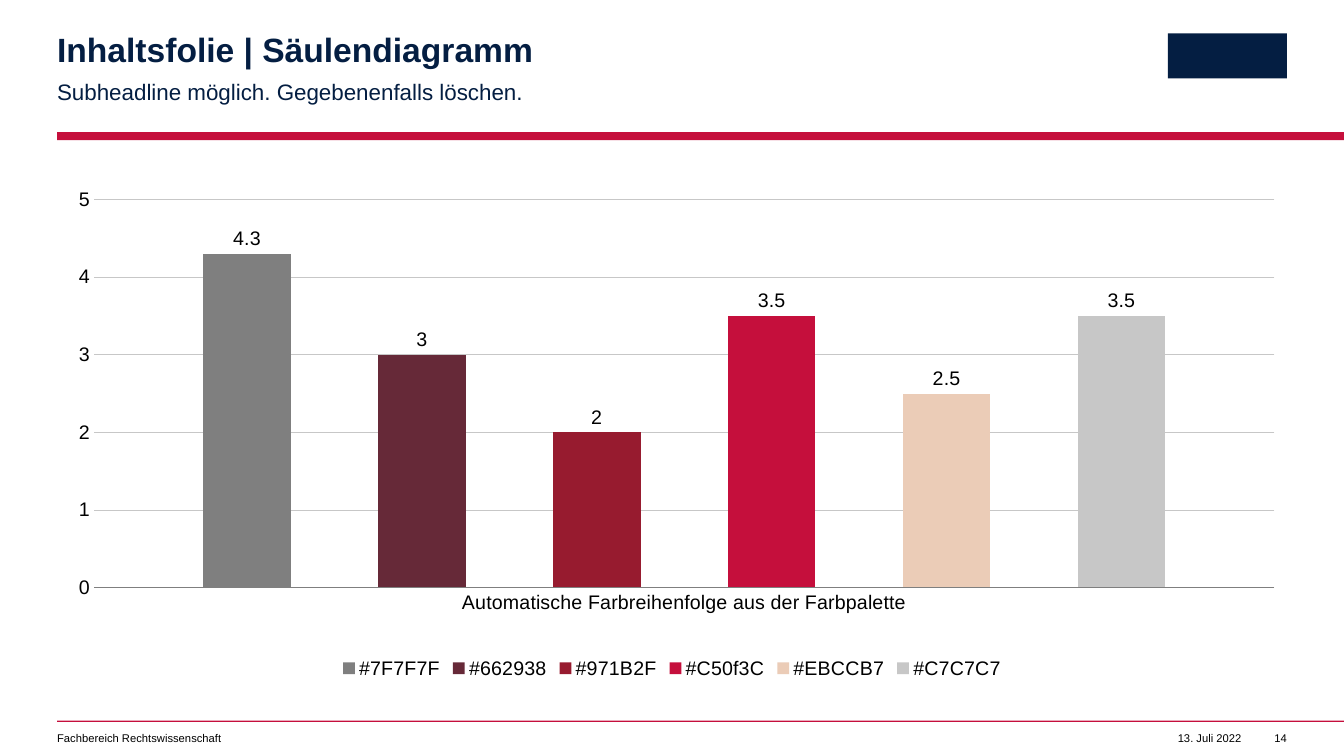
from dataclasses import dataclass

from lxml.etree import SubElement
from pptx import Presentation
from pptx.chart.data import CategoryChartData
from pptx.dml.color import RGBColor
from pptx.enum.chart import XL_CHART_TYPE, XL_LABEL_POSITION, XL_LEGEND_POSITION, XL_TICK_MARK
from pptx.enum.shapes import MSO_SHAPE
from pptx.enum.text import MSO_ANCHOR, MSO_AUTO_SIZE, PP_ALIGN
from pptx.oxml import parse_xml
from pptx.oxml.ns import nsdecls, qn
from pptx.slide import Slide
from pptx.text.text import Font, TextFrame
from pptx.util import Cm, Pt

NAVY = RGBColor(0x04, 0x1E, 0x42)
CRIMSON = RGBColor(0xC5, 0x0F, 0x3C)
BLACK = RGBColor(0x00, 0x00, 0x00)
GREY = RGBColor(0x7F, 0x7F, 0x7F)
WINE = RGBColor(0x66, 0x29, 0x38)
RUBY = RGBColor(0x97, 0x1B, 0x2F)
SAND = RGBColor(0xEB, 0xCC, 0xB7)
SILVER = RGBColor(0xC7, 0xC7, 0xC7)

FONT_NAME = "Arial"
PAGE_WIDTH = 33.87
PAGE_HEIGHT = 19.05
MARGIN = 1.44
CONTENT_WIDTH = PAGE_WIDTH - 2 * MARGIN


@dataclass(frozen=True)
class Block:
    left: float
    top: float
    width: float
    height: float
    color: RGBColor


@dataclass(frozen=True)
class Label:
    text: str
    left: float
    top: float
    width: float
    height: float
    size: float = 8
    color: RGBColor = BLACK
    bold: bool = False
    align: PP_ALIGN = PP_ALIGN.LEFT
    line_spacing: float = 1.0


@dataclass(frozen=True)
class Column:
    name: str
    value: float
    color: RGBColor


BLOCKS = [
    Block(MARGIN, 3.33, PAGE_WIDTH - MARGIN, 0.2, CRIMSON),
    Block(MARGIN, 18.16, PAGE_WIDTH - MARGIN, 0.03, CRIMSON),
    Block(29.43, 0.84, 3, 1.14, NAVY),
]
TITLE = Label("Inhaltsfolie | Säulendiagramm", MARGIN, 0.84, 19.02, 0.91,
              24, NAVY, True, line_spacing=0.9)
LABELS = [
    Label("Subheadline möglich. Gegebenenfalls löschen.", MARGIN, 1.91, 19.02, 0.69,
          16, NAVY, line_spacing=1.1),
    Label("Fachbereich Rechtswissenschaft", MARGIN, 18.44, 15.2, 0.33),
    Label("13. Juli 2022", 28.93, 18.44, 2.36, 0.33, align=PP_ALIGN.RIGHT),
    Label("14", 31.9, 18.44, 0.53, 0.33, align=PP_ALIGN.RIGHT),
]
CATEGORY = "Automatische Farbreihenfolge aus der Farbpalette"
COLUMNS = [
    Column("#7F7F7F", 4.3, GREY),
    Column("#662938", 3, WINE),
    Column("#971B2F", 2, RUBY),
    Column("#C50f3C", 3.5, CRIMSON),
    Column("#EBCCB7", 2.5, SAND),
    Column("#C7C7C7", 3.5, SILVER),
]
PLOT_AREA = {"x": 0.03, "y": 0.04, "w": 0.96, "h": 0.77}


def style_font(font: Font, size: float, color: RGBColor, bold: bool = False) -> None:
    font.name = FONT_NAME
    font.size = Pt(size)
    font.bold = bold
    font.color.rgb = color


def fill_frame(frame: TextFrame, label: Label) -> None:
    frame.text = label.text
    frame.word_wrap = True
    frame.auto_size = MSO_AUTO_SIZE.NONE
    frame.vertical_anchor = MSO_ANCHOR.TOP
    frame.margin_left = frame.margin_right = frame.margin_top = frame.margin_bottom = 0
    para = frame.paragraphs[0]
    para.alignment = label.align
    para.line_spacing = label.line_spacing
    style_font(para.runs[0].font, label.size, label.color, label.bold)


def draw_block(page: Slide, block: Block) -> None:
    box = page.shapes.add_shape(MSO_SHAPE.RECTANGLE, Cm(block.left), Cm(block.top),
                                Cm(block.width), Cm(block.height))
    box.shadow.inherit = False
    box.fill.solid()
    box.fill.fore_color.rgb = block.color
    box.line.fill.background()


def draw_title(page: Slide, label: Label) -> None:
    title = page.shapes.title
    title.left, title.top = Cm(label.left), Cm(label.top)
    title.width, title.height = Cm(label.width), Cm(label.height)
    fill_frame(title.text_frame, label)


def draw_label(page: Slide, label: Label) -> None:
    box = page.shapes.add_textbox(Cm(label.left), Cm(label.top),
                                  Cm(label.width), Cm(label.height))
    fill_frame(box.text_frame, label)


def draw_chart(page: Slide, columns: list[Column]) -> None:
    chart_data = CategoryChartData()
    chart_data.categories = [CATEGORY]
    for column in columns:
        chart_data.add_series(column.name, [column.value])
    chart = page.shapes.add_chart(XL_CHART_TYPE.COLUMN_CLUSTERED, Cm(MARGIN), Cm(4.52),
                                  Cm(CONTENT_WIDTH), Cm(12.7), chart_data).chart
    style_font(chart.font, 14, BLACK)
    chart.has_title = False
    chart.has_legend = True
    chart.legend.position = XL_LEGEND_POSITION.BOTTOM
    chart.legend.include_in_layout = False
    style_font(chart.legend.font, 14, BLACK)

    for axis in (chart.category_axis, chart.value_axis):
        axis.major_tick_mark = axis.minor_tick_mark = XL_TICK_MARK.NONE
        style_font(axis.tick_labels.font, 14, BLACK)
    chart.category_axis.format.line.color.rgb = GREY
    chart.category_axis.format.line.width = Pt(0.5)
    value_axis = chart.value_axis
    value_axis.minimum_scale, value_axis.maximum_scale, value_axis.major_unit = 0, 5, 1
    value_axis.format.line.fill.background()
    value_axis.major_gridlines.format.line.color.rgb = SILVER
    value_axis.major_gridlines.format.line.width = Pt(0.5)

    plot = chart.plots[0]
    plot.vary_by_categories = False
    plot.gap_width = 250
    plot.overlap = -100
    for series, column in zip(plot.series, columns):
        series.format.fill.solid()
        series.format.fill.fore_color.rgb = column.color
        labels = series.data_labels
        labels.show_value = True
        labels.position = XL_LABEL_POSITION.OUTSIDE_END
        style_font(labels.font, 14, BLACK)

    plot_area = chart.element.find(".//" + qn("c:plotArea"))
    for layout in plot_area.findall(qn("c:layout")):
        plot_area.remove(layout)
    layout = parse_xml(f"<c:layout {nsdecls('c')}><c:manualLayout/></c:layout>")
    manual = layout[0]
    SubElement(manual, qn("c:layoutTarget")).set("val", "inner")
    for side in ("x", "y"):
        SubElement(manual, qn(f"c:{side}Mode")).set("val", "edge")
    for side, share in PLOT_AREA.items():
        SubElement(manual, qn(f"c:{side}")).set("val", str(share))
    plot_area.insert(0, layout)


def main() -> None:
    deck = Presentation()
    deck.slide_width, deck.slide_height = Cm(PAGE_WIDTH), Cm(PAGE_HEIGHT)
    page = deck.slides.add_slide(deck.slide_layouts[5])
    for block in BLOCKS:
        draw_block(page, block)
    draw_title(page, TITLE)
    for label in LABELS:
        draw_label(page, label)
    draw_chart(page, COLUMNS)
    deck.save("out.pptx")


if __name__ == "__main__":
    main()
